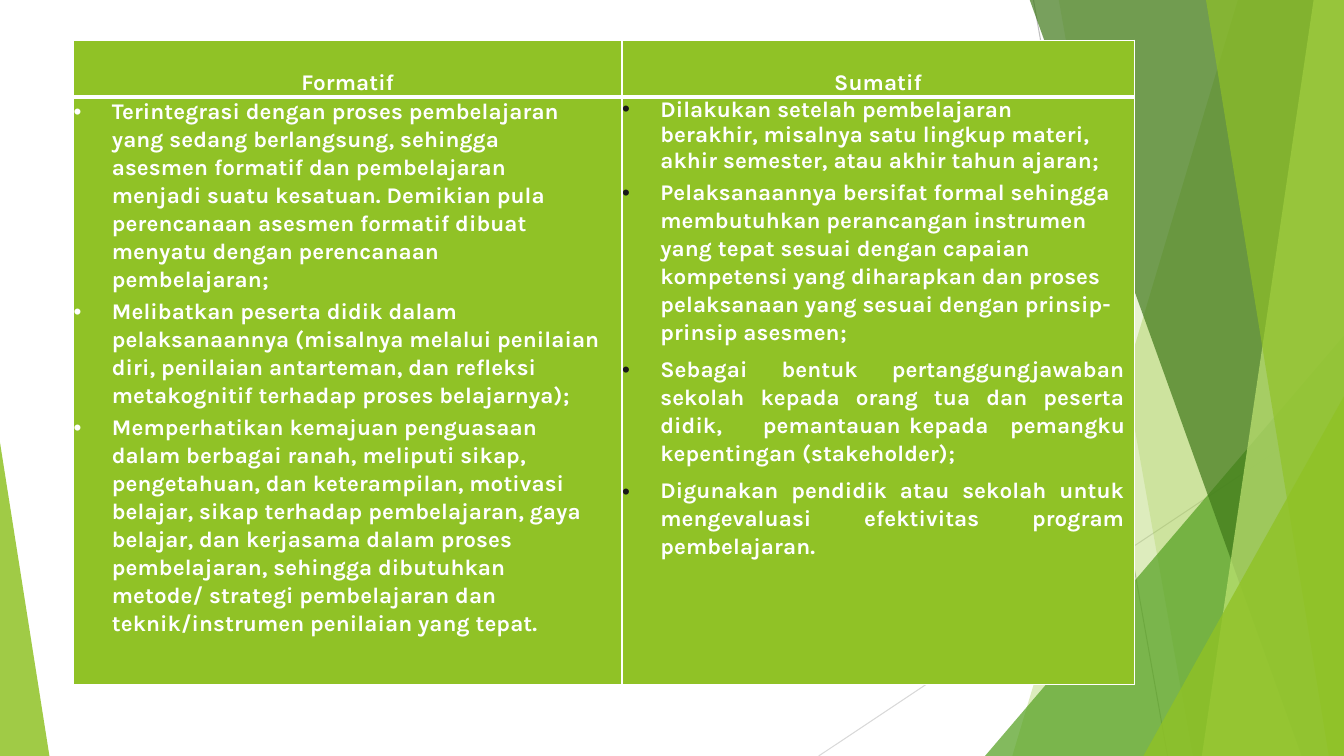
from lxml import etree
from pptx import Presentation, util as u
from pptx.dml.color import RGBColor
from pptx.enum import shapes, text
from pptx.oxml import ns

COLOURS = {
    "white": "FFFFFF", "lime": "90C226", "green": "54A021", "forest": "3F7819",
    "pale": "C0E474", "grey": "BFBFBF", "silver": "D9D9D9", "bullet": "181818",
}
WIDTH, HEIGHT = 13.33, 7.5
JUSTIFY = text.PP_ALIGN.JUSTIFY

FORMATIVE = [
    dict(words="Terintegrasi dengan proses pembelajaran yang sedang berlangsung, sehingga "
         "asesmen formatif dan pembelajaran menjadi suatu kesatuan. Demikian pula perencanaan "
         "asesmen formatif dibuat menyatu dengan perencanaan pembelajaran;", before=4.7,
         right=0.46),
    dict(words="Melibatkan peserta didik dalam pelaksanaannya (misalnya melalui penilaian diri, "
         "penilaian antarteman, dan refleksi metakognitif terhadap proses belajarnya);",
         before=2.9),
    dict(words="Memperhatikan kemajuan penguasaan dalam berbagai ranah, meliputi sikap, "
         "pengetahuan, dan keterampilan, motivasi belajar, sikap terhadap pembelajaran, gaya "
         "belajar, dan kerjasama dalam proses pembelajaran, sehingga dibutuhkan metode/ "
         "strategi pembelajaran dan teknik/instrumen penilaian yang tepat.", before=3,
         right=0.35),
]
SUMMATIVE = [
    dict(words="Dilakukan setelah pembelajaran berakhir, misalnya satu lingkup materi, "
         "akhir semester, atau akhir tahun ajaran;", before=4.8, spacing=0.98, right=0.27),
    dict(words="Pelaksanaannya bersifat formal sehingga membutuhkan perancangan instrumen yang "
         "tepat sesuai dengan capaian kompetensi yang diharapkan dan proses pelaksanaan yang "
         "sesuai dengan prinsip-prinsip asesmen;", before=3.1),
    dict(words="Sebagai bentuk pertanggungjawaban sekolah kepada orang tua dan peserta didik, "
         "pemantauan\tkepada\tpemangku kepentingan (stakeholder);", before=6.5,
         align=JUSTIFY, tabs=(0.3, 1.29, 2.01), right=0.09),
    dict(words="Digunakan pendidik atau sekolah untuk mengevaluasi efektivitas program "
         "pembelajaran.", before=6.5, align=JUSTIFY, right=0.09),
]


def rgb(name):
    return RGBColor.from_string(COLOURS[name])


def add_xml(parent, tag, **attributes):
    return etree.SubElement(parent, ns.qn(tag), attributes)


def paint(shape, colour, opacity):
    """Give a facet a see-through fill with no line or shadow."""
    shape.shadow.inherit = False
    shape.line.fill.background()
    shape.fill.solid()
    shape.fill.fore_color.rgb = rgb(colour)
    tint = shape.fill._xPr.find(".//" + ns.qn("a:srgbClr"))
    add_xml(tint, "a:alpha", val=str(opacity * 1000))


def add_thin_line(page, start, end, colour):
    line = page.shapes.add_connector(
        shapes.MSO_CONNECTOR.STRAIGHT, *(u.Inches(n) for n in start + end))
    line.line.color.rgb = rgb(colour)
    line.line.width = u.Pt(0.75)
    add_xml(line._element.spPr, "a:effectLst")


def add_band(page, top_x, bottom_x, colour, opacity):
    """Fill from a slanted edge to the right side of the page."""
    corners = [(top_x, -0.01), (WIDTH, -0.01), (WIDTH, HEIGHT), (bottom_x, HEIGHT)]
    points = [(u.Inches(x), u.Inches(y)) for x, y in corners]
    outline = page.shapes.build_freeform(*points[0])
    outline.add_line_segments(points[1:], close=True)
    paint(outline.convert_to_shape(), colour, opacity)


def add_corner(page, left, top, width, peak, colour, opacity):
    """Stand a triangle on the bottom edge, its peak at 0 (left) or 1 (right)."""
    corner = page.shapes.add_shape(
        shapes.MSO_SHAPE.ISOSCELES_TRIANGLE,
        *(u.Inches(n) for n in (left, top, width, HEIGHT - top)))
    corner.adjustments[0] = peak
    paint(corner, colour, opacity)


def add_facets(page):
    add_thin_line(page, (10.25, 0), (11.58, HEIGHT), "grey")
    add_thin_line(page, (WIDTH, 4.03), (8.12, HEIGHT), "silver")
    add_band(page, 12.28, 10.04, "lime", 30)
    add_band(page, 10.5, 11.83, "lime", 20)
    add_corner(page, 9.77, 3.33, 3.56, 1, "green", 72)
    add_band(page, 10.21, 12.91, "forest", 70)
    add_band(page, 13.03, 11.92, "pale", 70)
    add_band(page, 11.96, 13.18, "lime", 65)
    add_corner(page, 11.34, 3.93, 1.99, 1, "lime", 80)
    add_corner(page, 0, 4.39, 0.49, 0, "lime", 85)


def style_cell(cell, top, bottom):
    """Set white borders (points), green fill and zero margins."""
    cell.margin_left = cell.margin_right = cell.margin_top = cell.margin_bottom = 0
    props = cell._tc.get_or_add_tcPr()
    for tag, width in (("a:lnL", 1), ("a:lnR", 1), ("a:lnT", top), ("a:lnB", bottom)):
        border = add_xml(props, tag, w=str(u.Pt(width)))
        add_xml(add_xml(border, "a:solidFill"), "a:srgbClr", val=COLOURS["white"])
    cell.fill.solid()
    cell.fill.fore_color.rgb = rgb("lime")


def write(para, words, spacing=1.07):
    para.line_spacing = spacing
    span = para.add_run()
    span.text = words
    font = span.font
    font.name, font.size, font.bold = "Karla", u.Pt(16), True
    font.color.rgb = rgb("white")
    font._element.set("spc", "10")


def write_bullet(para, bullet, words, before, spacing=1.07, align=text.PP_ALIGN.LEFT,
                 tabs=(0.3,), right=0):
    write(para, words, spacing)
    para.alignment = align
    para.space_before = u.Pt(before)
    props = para._p.get_or_add_pPr()
    for side, inches in (("marL", 0.38), ("marR", right), ("indent", -0.38)):
        props.set(side, str(u.Inches(inches)))
    add_xml(add_xml(props, "a:buClr"), "a:srgbClr", val=COLOURS[bullet])
    add_xml(props, "a:buFont", typeface="Arial")
    add_xml(props, "a:buChar", char="•")
    stops = add_xml(props, "a:tabLst")
    for stop in tabs:
        add_xml(stops, "a:tab", pos=str(u.Inches(stop)), algn="l")


def add_comparison(page, left, top, widths, heights):
    frame = page.shapes.add_table(
        2, 2, *(u.Inches(n) for n in (left, top, sum(widths), sum(heights))))
    table = frame.table
    table.horz_banding = table.first_row = False
    for row, height in zip(table.rows, heights):
        row.height = u.Inches(height)
    columns = (("Formatif", FORMATIVE, "white"), ("Sumatif", SUMMATIVE, "bullet"))
    for i, (title, points, bullet) in enumerate(columns):
        table.columns[i].width = u.Inches(widths[i])
        header, body = table.cell(0, i), table.cell(1, i)
        style_cell(header, 1, 3)
        header.margin_top = u.Inches(0.28)
        heading = header.text_frame.paragraphs[0]
        heading.alignment = text.PP_ALIGN.CENTER
        write(heading, title)
        style_cell(body, 3, 1)
        for n, point in enumerate(points):
            box = body.text_frame
            para = box.add_paragraph() if n else box.paragraphs[0]
            write_bullet(para, bullet, **point)


def main():
    deck = Presentation()
    deck.slide_width, deck.slide_height = u.Inches(WIDTH), u.Inches(HEIGHT)
    page = deck.slides.add_slide(deck.slide_layouts[6])
    add_facets(page)
    add_comparison(page, 0.73, 0.4, (5.44, 5.08), (0.56, 5.83))
    deck.save("out.pptx")


if __name__ == "__main__":
    main()
